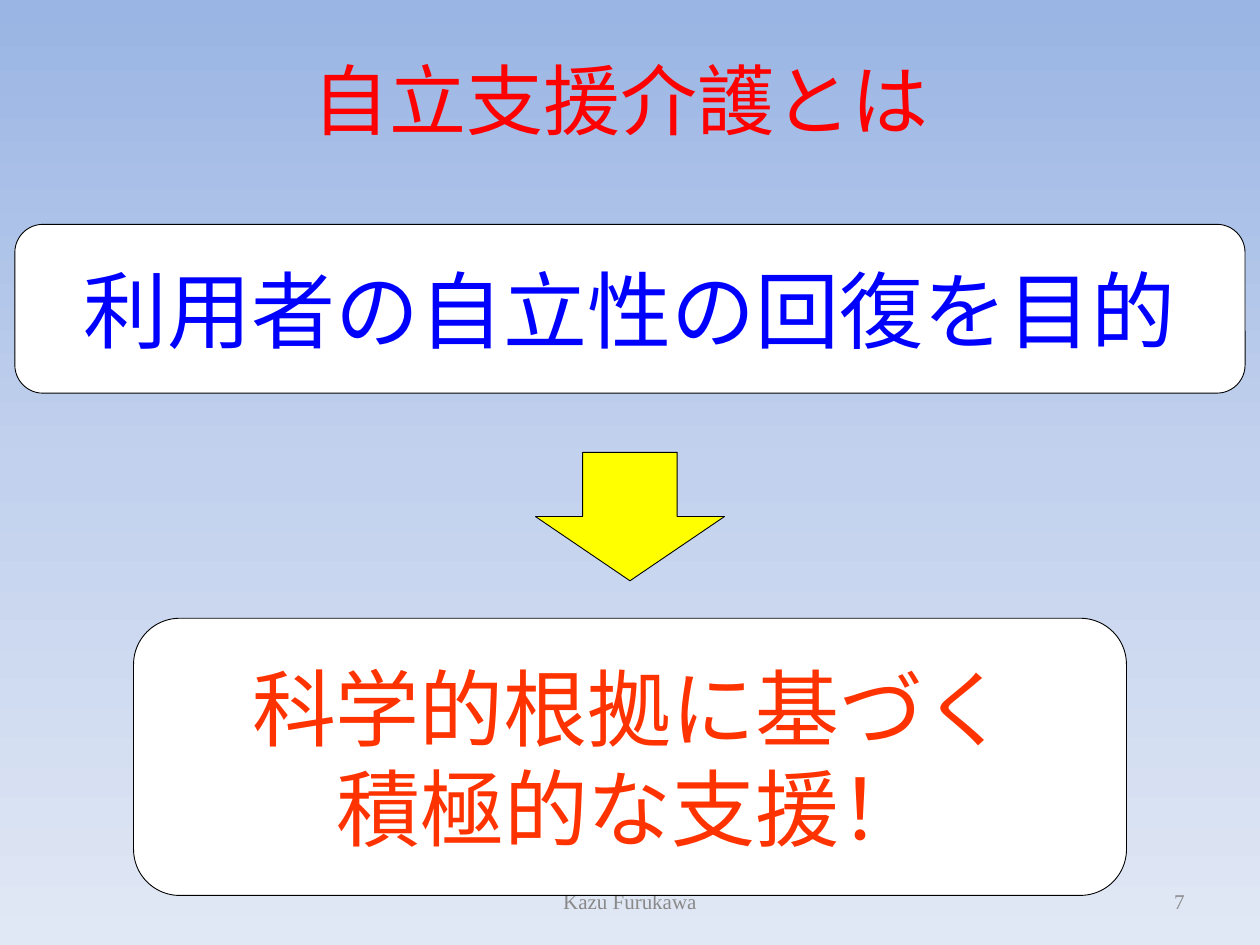
from copy import deepcopy

from lxml import etree
from pptx import Presentation
from pptx.dml.color import RGBColor
from pptx.enum.shapes import MSO_SHAPE
from pptx.enum.text import MSO_ANCHOR, PP_ALIGN
from pptx.oxml.ns import qn
from pptx.util import Pt

ROUNDED = MSO_SHAPE.ROUNDED_RECTANGLE
DOWN_ARROW = MSO_SHAPE.DOWN_ARROW
MIDDLE = MSO_ANCHOR.MIDDLE
CENTER = PP_ALIGN.CENTER
RIGHT = PP_ALIGN.RIGHT

WIDTH, HEIGHT = 720, 540

THEME = {
    "heading_font": "Noto Sans CJK JP",
    "footer_font": "Times New Roman",
    "title_size": 44,
    "body_size": 48,
    "footer_size": 12,
    "title": "FF0000",
    "goal": "0000FF",
    "method": "FF3300",
    "footer": "898989",
    "panel": "FFFFFF",
    "arrow": "FFFF00",
    "outline": "000000",
    "background": [(0, "9AB5E4"), (0.5, "C2D1ED"), (1, "E1E8F5")],
}

TITLE = ("自立支援介護とは", (31, 20.2, 648, 72.7))
PANELS = [
    (["科学的根拠に基づく", "積極的な支援！"], "method", 353.3, 567.4, 158.4),
    (["利用者の自立性の回復を目的"], "goal", 128.2, 703, 96.5),
]
ARROW = (258.5, 108, 73.4)
FOOTERS = [
    ("Kazu Furukawa", (246, 500.5, 228, 28.8), CENTER),
    ("7", (516, 500.5, 168, 28.8), RIGHT),
]


def color(name):
    return RGBColor.from_string(THEME[name])


def write(box, lines, font, size, ink, align=CENTER):
    frame = box.text_frame
    frame.word_wrap = True
    frame.vertical_anchor = MIDDLE
    for index, line in enumerate(lines):
        para = frame.add_paragraph() if index else frame.paragraphs[0]
        para.alignment = align
        span = para.add_run()
        span.text = line
        span.font.name = THEME[font]
        span.font.size = Pt(THEME[size])
        span.font.color.rgb = color(ink)
        east_asian = etree.SubElement(span.font._element, qn("a:ea"))
        east_asian.set("typeface", THEME[font])


def add_centered(page, kind, top, width, height, fill):
    left = (WIDTH - width) / 2
    box = page.shapes.add_shape(kind, Pt(left), Pt(top), Pt(width), Pt(height))
    box.shadow.inherit = False
    box.fill.solid()
    box.fill.fore_color.rgb = color(fill)
    box.line.color.rgb = color("outline")
    box.line.width = Pt(0.5)
    return box


def paint_background(page):
    fill = page.background.fill
    fill.gradient()
    fill.gradient_angle = 270
    stop_list = page._element.find(".//" + qn("a:gsLst"))
    stop_list.append(deepcopy(stop_list[-1]))
    for stop, (position, tone) in zip(fill.gradient_stops, THEME["background"]):
        stop.position = position
        stop.color.rgb = RGBColor.from_string(tone)


def main():
    deck = Presentation()
    deck.slide_width, deck.slide_height = Pt(WIDTH), Pt(HEIGHT)
    page = deck.slides.add_slide(deck.slide_layouts[5])
    paint_background(page)

    text, place = TITLE
    title = page.shapes.title
    title.left, title.top, title.width, title.height = map(Pt, place)
    write(title, [text], "heading_font", "title_size", "title")

    for text, place, align in FOOTERS:
        box = page.shapes.add_textbox(*map(Pt, place))
        write(box, [text], "footer_font", "footer_size", "footer", align)

    add_centered(page, DOWN_ARROW, *ARROW, "arrow")
    for lines, ink, top, width, height in PANELS:
        panel = add_centered(page, ROUNDED, top, width, height, "panel")
        write(panel, lines, "heading_font", "body_size", ink)

    deck.save("out.pptx")


if __name__ == "__main__":
    main()
